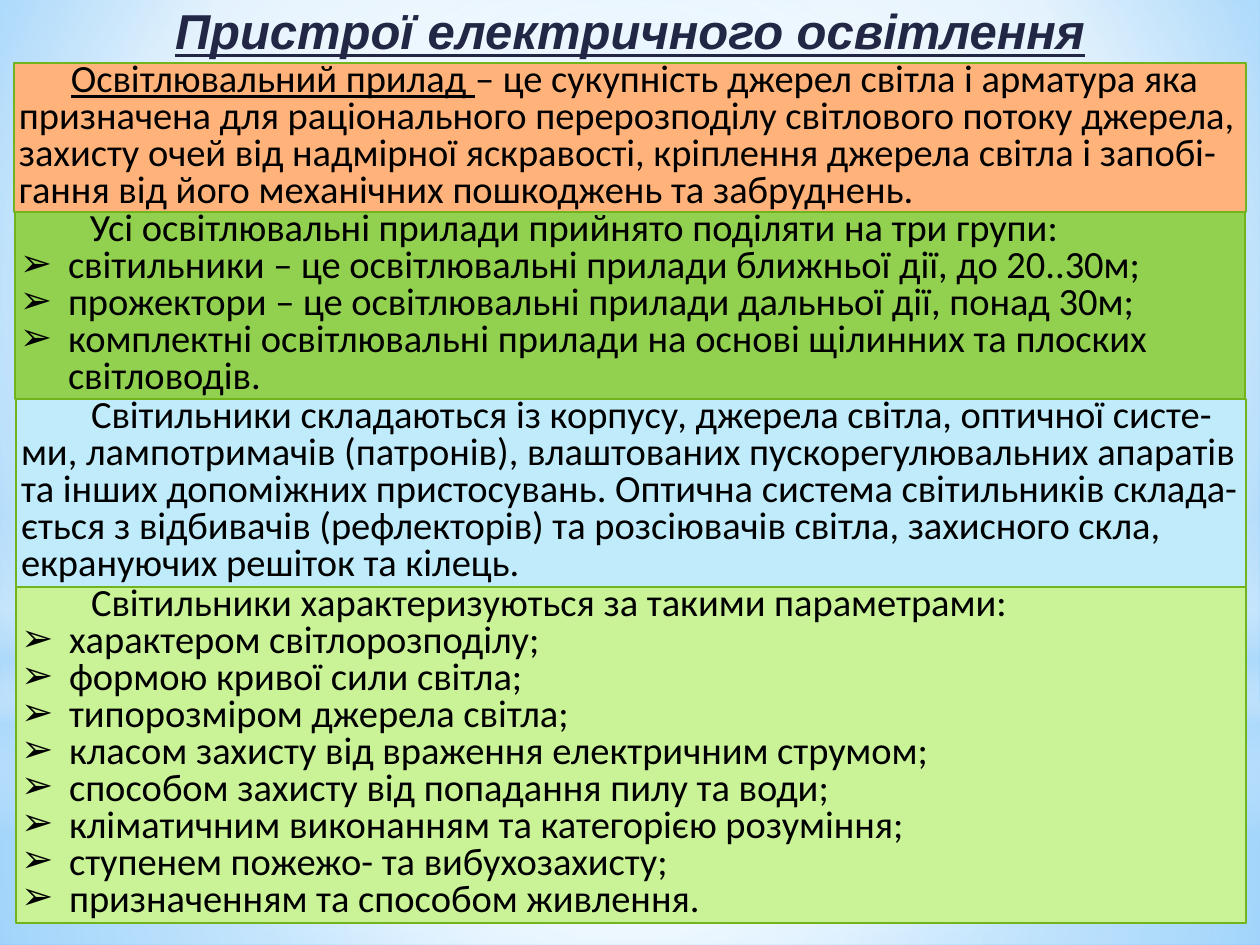
from lxml.etree import SubElement
from pptx import Presentation
from pptx.dml.color import RGBColor
from pptx.enum.shapes import MSO_SHAPE as Shape
from pptx.enum.text import MSO_ANCHOR as Anchor, MSO_AUTO_SIZE as AutoSize, PP_ALIGN as Align
from pptx.oxml.ns import qn
from pptx.util import Emu, Pt

EMU_PER_PX = 914400 / 126
WIDTH, HEIGHT = 1260, 945
CENTRE = (50, 50, 50, 50)
WHITE, PALE = "FFFFFF", "B4DCFA"
BODY = {"size": Pt(22), "name": "Calibri"}
HEADING = {"size": Pt(28), "name": "Arial", "bold": True, "italic": True, "underline": True}

GLOWS = [
    (Shape.RECTANGLE, (0, 703, WIDTH, 242), [(0, WHITE, 91), (37, WHITE, 76), (100, PALE, 79)], CENTRE),
    (Shape.RECTANGLE, (0, 0, WIDTH, 703), [(0, WHITE, 89), (48, WHITE, 62), (100, PALE, 79)], CENTRE),
    (Shape.RECTANGLE, (0, 519, WIDTH, 315),
     [(0, WHITE, 0), (29, WHITE, 30), (45, PALE, 40), (55, WHITE, 26), (65, PALE, 60), (100, WHITE, 0)], None),
    (Shape.OVAL, (0, 220, WIDTH, 703), [(0, WHITE, 100), (56, WHITE, 0)], CENTRE),
]

PANELS = [
    (14, 1232, 149, "FFB37A", 52, [
        ("Освітлювальний прилад ", True),
        ("– це сукупність джерел світла і арматура яка призначена для раціонального "
         "перерозподілу світлового потоку джерела, захисту очей від надмірної яскравості, "
         "кріплення джерела світла і запобі-гання від його механічних пошкоджень та забруднень.", False),
    ], []),
    (15, 1230, 187, "92D050", 70, [
        ("Усі освітлювальні прилади прийнято поділяти на три групи:", False),
    ], [
        "світильники – це освітлювальні прилади ближньої дії, до 20..30м;",
        "прожектори – це освітлювальні прилади дальньої дії, понад 30м;",
        "комплектні освітлювальні прилади на основі щілинних та плоских світловодів.",
    ]),
    (16, 1230, 188, "BFEBFA", 70, [
        ("Світильники складаються із корпусу, джерела світла, оптичної систе-ми, "
         "лампотримачів (патронів), влаштованих пускорегулювальних апаратів та інших "
         "допоміжних пристосувань. Оптична система світильників склада-ється з відбивачів "
         "(рефлекторів) та розсіювачів світла, захисного скла, екрануючих решіток та кілець.", False),
    ], []),
    (16, 1230, 336, "CAF297", 70, [
        ("Світильники характеризуються за такими параметрами:", False),
    ], [
        "характером світлорозподілу;",
        "формою кривої сили світла;",
        "типорозміром джерела світла;",
        "класом захисту від враження електричним струмом;",
        "способом захисту від попадання пилу та води;",
        "кліматичним виконанням та категорією розуміння;",
        "ступенем пожежо- та вибухозахисту;",
        "призначенням та способом живлення.",
    ]),
]


def px(length):
    """Turn pixels into EMU."""
    return Emu(round(length * EMU_PER_PX))


def color(value):
    """Turn a hex string into a colour."""
    return RGBColor.from_string(value)


def assign(target, values):
    """Set each attribute named in a dict."""
    for name, value in values.items():
        setattr(target, name, value)


def add_gradient(fill, owner, stops, focus):
    """Fill with a circular gradient, or a vertical one when there is no focus."""
    fill.gradient()
    gradient = owner.find(".//" + qn("a:gradFill"))
    for part in list(gradient):
        gradient.remove(part)
    stop_list = SubElement(gradient, qn("a:gsLst"))
    for position, tint, opacity in stops:
        stop = SubElement(stop_list, qn("a:gs"), pos=str(position * 1000))
        shade = SubElement(stop, qn("a:srgbClr"), val=tint)
        SubElement(shade, qn("a:alpha"), val=str(opacity * 1000))
    if focus:
        circle = SubElement(gradient, qn("a:path"), path="circle")
        edges = {side: str(share * 1000) for side, share in zip("ltrb", focus)}
        SubElement(circle, qn("a:fillToRect"), **edges)
    else:
        SubElement(gradient, qn("a:lin"), ang="5400000", scaled="0")


def add_glow(slide, kind, box, stops, focus):
    """Add a borderless translucent backdrop layer."""
    glow = slide.shapes.add_shape(kind, *map(px, box))
    glow.shadow.inherit = False
    glow.line.fill.background()
    add_gradient(glow.fill, glow.element, stops, focus)


def set_frame(frame, margin):
    """Set the wrapping, anchor and margins of a text frame."""
    assign(frame, {"word_wrap": True, "vertical_anchor": Anchor.TOP,
                   "auto_size": AutoSize.SHAPE_TO_FIT_TEXT,
                   "margin_left": px(margin), "margin_right": px(margin),
                   "margin_top": 0, "margin_bottom": 0})


def add_run(paragraph, text, font, tint):
    """Add a formatted run."""
    run = paragraph.add_run()
    run.text = text
    assign(run.font, font)
    run.font.color.rgb = color(tint)


def format_paragraph(paragraph, margin, indent, bullet=None):
    """Set the spacing, indents and optional bullet of a body paragraph."""
    assign(paragraph, {"alignment": Align.LEFT, "line_spacing": 0.8})
    properties = paragraph._p.get_or_add_pPr()
    properties.set("marL", str(px(margin)))
    properties.set("indent", str(px(indent)))
    if bullet:
        SubElement(properties, qn("a:buFont"), typeface="Arial")
        SubElement(properties, qn("a:buChar"), char=bullet)


def add_heading(slide, text):
    """Add the centred slide heading."""
    heading = slide.shapes.add_textbox(*map(px, (15, 10, 1230, 50)))
    set_frame(heading.text_frame, 0)
    line = heading.text_frame.paragraphs[0]
    assign(line, {"alignment": Align.CENTER, "line_spacing": 0.85})
    add_run(line, text, HEADING, "212745")


def add_panel(slide, box, background, indent, intro, items):
    """Add a coloured panel with an intro paragraph and bulleted items."""
    panel = slide.shapes.add_shape(Shape.RECTANGLE, *map(px, box))
    panel.shadow.inherit = False
    panel.fill.solid()
    panel.fill.fore_color.rgb = color(background)
    panel.line.color.rgb = color("72B41D")
    panel.line.width = Pt(1.25)
    frame = panel.text_frame
    set_frame(frame, 5)
    opening = frame.paragraphs[0]
    format_paragraph(opening, 0, indent)
    for text, underline in intro:
        add_run(opening, text, {**BODY, "underline": underline}, "000000")
    for item in items:
        entry = frame.add_paragraph()
        format_paragraph(entry, 48, -48, "➢")
        add_run(entry, item, BODY, "000000")


def main():
    """Build and save the slide."""
    deck = Presentation()
    assign(deck, {"slide_width": px(WIDTH), "slide_height": px(HEIGHT)})
    slide = deck.slides.add_slide(deck.slide_layouts[6])
    sky = [(0, "9ED5FF", 100), (60, WHITE, 100), (100, "5BB9FF", 100)]
    add_gradient(slide.background.fill, slide.element, sky, (20, 10, 20, 60))
    for glow in GLOWS:
        add_glow(slide, *glow)
    add_heading(slide, "Пристрої електричного освітлення")
    top = 63
    for left, width, height, *content in PANELS:
        add_panel(slide, (left, top, width, height), *content)
        top += height
    deck.save("out.pptx")


if __name__ == "__main__":
    main()
